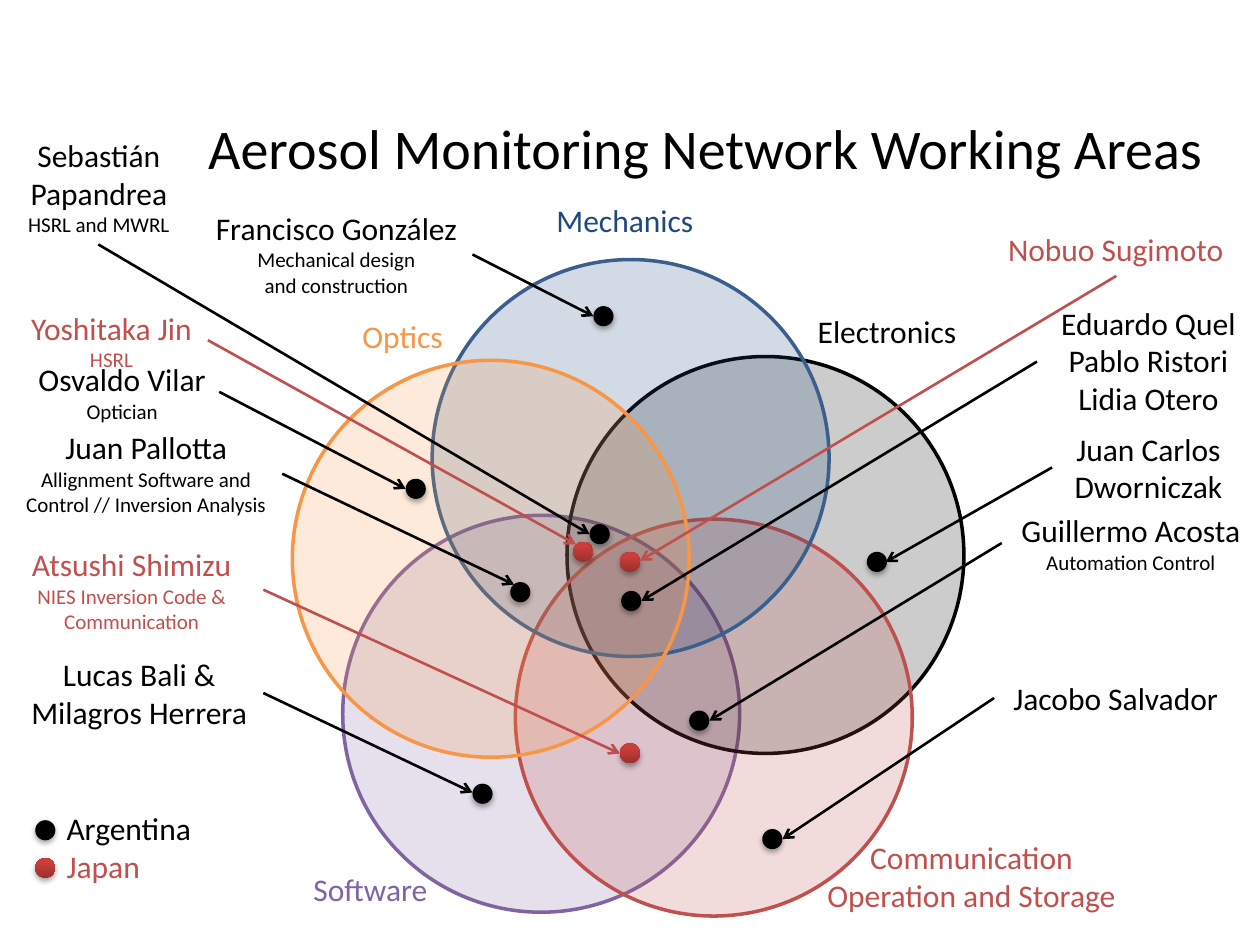
"""Build the slide of working areas in an aerosol monitoring network."""
from pptx import Presentation
from pptx.dml.color import RGBColor
from pptx.enum import shapes, text
from pptx.oxml import parse_xml
from pptx.oxml.ns import nsdecls, qn
from pptx.util import Pt

PX = 9144
BLACK, RED, BLUE = "000000", "C0504D", "1F497D"
ORANGE, PURPLE = "F79646", "8064A2"
ALIGN = text.PP_ALIGN
SHADOW = (
    f'<a:effectLst {nsdecls("a")}><a:outerShdw blurRad="40000" dist="23000" '
    'dir="5400000" rotWithShape="0"><a:srgbClr val="000000">'
    '<a:alpha val="35000"/></a:srgbClr></a:outerShdw></a:effectLst>'
)

deck = Presentation()
deck.slide_width, deck.slide_height = 1000 * PX, 750 * PX
slide = deck.slides.add_slide(deck.slide_layouts[5])
tree = slide.shapes


def disc(left, top, size, color):
    item = tree.add_shape(shapes.MSO_SHAPE.OVAL, *(n * PX for n in (left, top, size, size)))
    item.shadow.inherit = False
    item.fill.solid()
    item.fill.fore_color.rgb = RGBColor.from_string(color)
    return item


def label(box, lines, color, main=9, wrap=True, align=ALIGN.CENTER):
    item = tree.add_textbox(*(n * PX for n in box))
    frame = item.text_frame
    frame.word_wrap = wrap
    frame.auto_size = text.MSO_AUTO_SIZE.SHAPE_TO_FIT_TEXT
    frame.text = "\n".join(lines)
    for row, para in enumerate(frame.paragraphs):
        para.alignment = align
        font = para.runs[0].font
        font.name = "Calibri"
        font.size = Pt(18 if row < main else 12)
        font.color.rgb = RGBColor.from_string(color)
    return item


title = tree.title
title.left, title.top, title.width, title.height = (n * PX for n in (50, 84, 915, 65))
title.text_frame.text = "Aerosol Monitoring Network Working Areas"
title.text_frame.vertical_anchor = text.MSO_ANCHOR.MIDDLE
head = title.text_frame.paragraphs[0]
head.alignment = ALIGN.RIGHT
font = head.runs[0].font
font.name, font.size = "Calibri", Pt(32)
font.color.rgb = RGBColor.from_string(BLACK)

areas = [
    (272, 409, PURPLE, PURPLE),
    (450, 283, BLACK, BLACK),
    (409, 412, RED, RED),
    (343, 206, BLUE, "3A5F8C"),
    (232, 286, ORANGE, ORANGE),
]
for left, top, color, edge in areas:
    ring = disc(left, top, 315, color)
    tint = ring.fill._xPr.find(qn("a:solidFill"))[0]
    tint.append(parse_xml(f'<a:alpha {nsdecls("a")} val="20000"/>'))
    ring.line.color.rgb = RGBColor.from_string(edge)
    ring.line.width = Pt(2)

names = [
    ((645, 660, 252, 71), "Communication Operation and Storage", RED, True),
    ((636, 243, 136, 40), "Electronics", BLACK, True),
    ((277, 247, 85, 40), "Optics", ORANGE, False),
    ((431, 155, 130, 40), "Mechanics", BLUE, False),
    ((238, 686, 112, 40), "Software", PURPLE, False),
]
for box, name, color, wrap in names:
    label(box, [name], color, wrap=wrap)

people = [
    (BLACK, (471, 243), (375, 202), (471, 251), (160, 161, 214, 81), False, 1,
     ["Francisco González", "Mechanical design", "and construction"]),
    (BLACK, (322, 380), (174, 311), (322, 388), (20, 281, 154, 61), False, 1,
     ["Osvaldo Vilar", "Optician"]),
    (BLACK, (605, 658), (789, 554), (621, 666), (789, 534, 193, 40), True, 1,
     ["Jacobo Salvador"]),
    (BLACK, (547, 564), (795, 431), (563, 572), (795, 401, 205, 61), True, 1,
     ["Guillermo Acosta", "Automation Control"]),
    (BLACK, (688, 438), (835, 371), (703, 446), (835, 336, 153, 71), True, 2,
     ["Juan Carlos", "Dworniczak"]),
    (BLACK, (405, 462), (224, 376), (408, 464), (7, 335, 218, 81), True, 1,
     ["Juan Pallotta", "Allignment Software and Control // Inversion Analysis"]),
    (BLACK, (375, 622), (209, 550), (375, 629), (12, 515, 197, 71), True, 2,
     ["Lucas Bali &", "Milagros Herrera"]),
    (RED, (455, 430), (165, 270), (457, 432), (12, 240, 153, 61), True, 1,
     ["Yoshitaka Jin", "HSRL"]),
    (RED, (492, 590), (209, 468), (492, 598), (0, 428, 209, 81), True, 1,
     ["Atsushi Shimizu", "NIES Inversion Code &", "Communication"]),
    (RED, (492, 438), (886, 219), (508, 445), (783, 178, 205, 40), True, 1,
     ["Nobuo Sugimoto"]),
    (BLACK, (493, 469), (823, 287), (509, 477), (823, 236, 177, 101), True, 3,
     ["Eduardo Quel", "Pablo Ristori", "Lidia Otero"]),
    (BLACK, (468, 416), (78, 194), (468, 424), (12, 103, 133, 91), False, 2,
     ["Sebastián", "Papandrea", "HSRL and MWRL"]),
]
dots = [(BLACK, (28, 651)), (RED, (28, 681))]
for color, spot, start, end, box, wrap, main, lines in people:
    dots.append((color, spot))
    link = tree.add_connector(shapes.MSO_CONNECTOR.STRAIGHT, *(n * PX for n in start + end))
    link.line.color.rgb = RGBColor.from_string(color)
    link.line.width = Pt(1.5)
    link.line._get_or_add_ln().append(parse_xml(f'<a:tailEnd {nsdecls("a")} type="arrow"/>'))
    link._element.spPr.append(parse_xml(f'<a:effectLst {nsdecls("a")}/>'))
    label(box, lines, color, main, wrap)

for color, spot in dots:
    dot = disc(*spot, 16, color)
    dot.line.fill.background()
    if color == RED:
        dot.fill.gradient()
        dot.fill.gradient_angle = 90
        for stop, place, shade in zip(dot.fill.gradient_stops, (0, 0.8), ("9C2F2D", "CB3E3A")):
            stop.position = place
            stop.color.rgb = RGBColor.from_string(shade)
    props = dot._element.spPr
    props.replace(props.find(qn("a:effectLst")), parse_xml(SHADOW))

legend = label((43, 637, 123, 71), ["Argentina", "Japan"], BLACK, align=ALIGN.LEFT)
japan = legend.text_frame.paragraphs[1].runs[0]
japan.font.color.rgb = RGBColor.from_string(RED)

deck.save("out.pptx")
